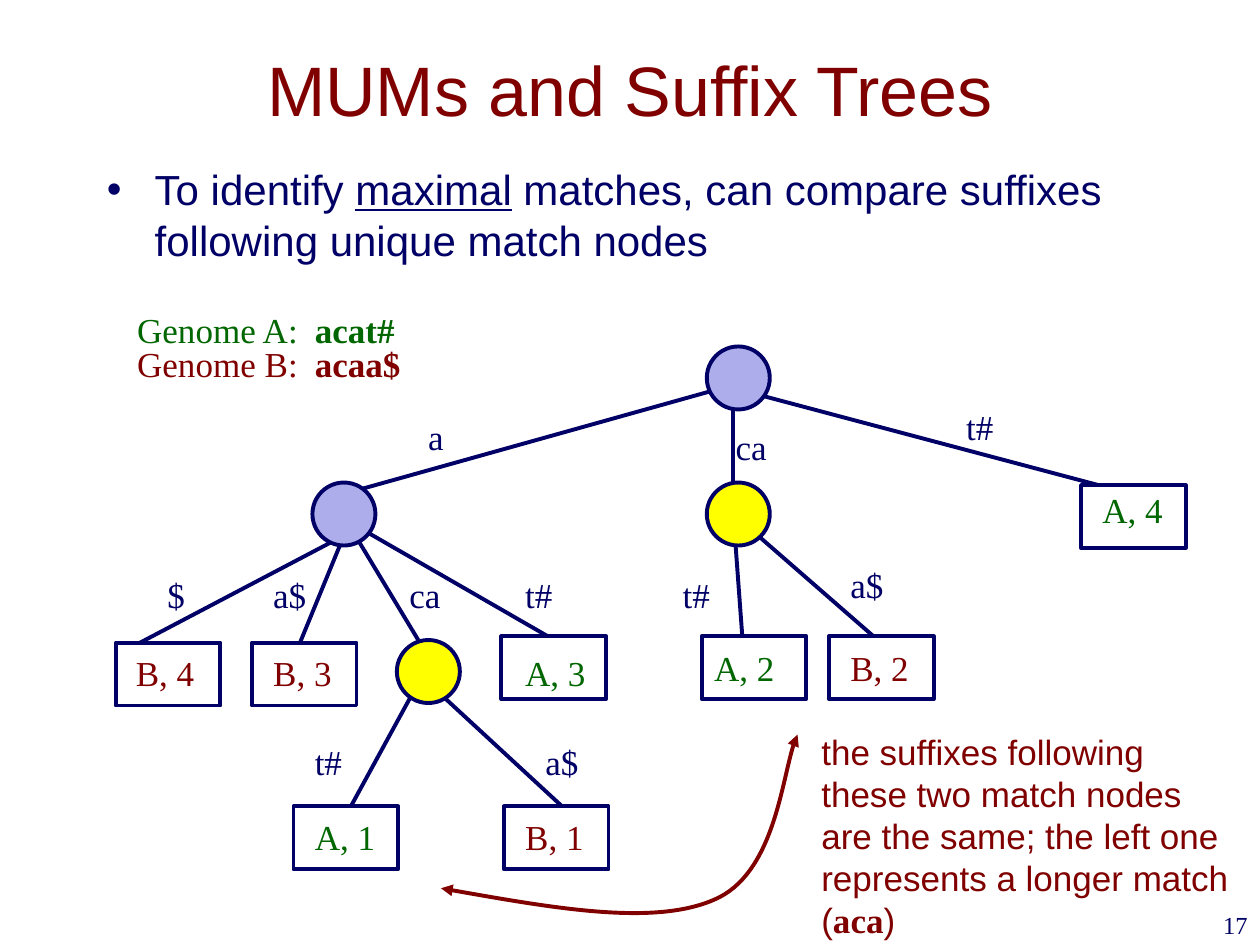
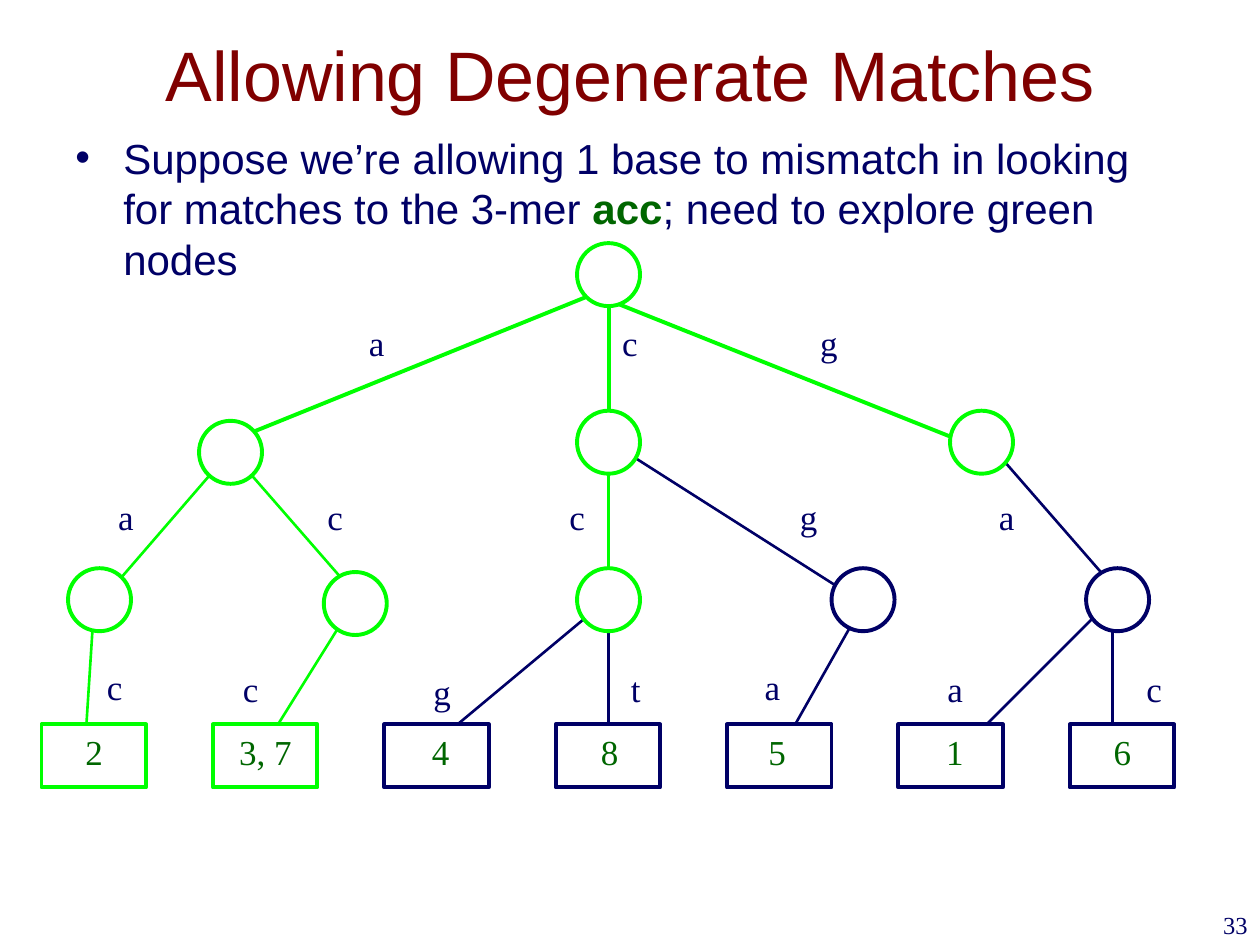
from dataclasses import dataclass
from typing import NamedTuple

from lxml.etree import SubElement
from pptx import Presentation
from pptx.dml.color import RGBColor
from pptx.enum.shapes import MSO_CONNECTOR, MSO_SHAPE
from pptx.enum.text import MSO_ANCHOR, PP_ALIGN
from pptx.oxml.ns import qn
from pptx.shapes.autoshape import Shape
from pptx.slide import Slide
from pptx.text.text import _Paragraph as Paragraph
from pptx.util import Cm, Length, Pt


@dataclass(frozen=True)
class Theme:
    navy: str = "000066"
    maroon: str = "800000"
    dark_green: str = "006600"
    lime: str = "00FF00"
    lavender: str = "ADADEB"
    yellow: str = "FFFF00"
    white: str = "FFFFFF"
    sans: str = "Arial"
    serif: str = "Times New Roman"
    title_size: int = 40
    body_size: int = 24
    label_size: int = 20
    number_size: int = 14
    thick: float = 2.25
    thin: float = 1.5


THEME = Theme()
NODE_SIZE = 0.5
LEAF_WIDTH, LEAF_HEIGHT = 0.83, 0.5
LABEL_HEIGHT = 0.43
# Glyph widths of the label font, in ems; every other glyph is half an em wide.
GLYPH_WIDTHS = {"a": 0.44, "c": 0.44, "t": 0.28, "A": 0.72, "B": 0.67, ",": 0.25, " ": 0.25}


class Area(NamedTuple):
    left: float
    top: float
    width: float
    height: float


class Span(NamedTuple):
    text: str
    color: str = THEME.navy
    size: int = THEME.label_size
    font: str = THEME.serif
    bold: bool = False
    underline: bool = False


class Edge(NamedTuple):
    start: tuple[float, float]
    end: tuple[float, float]
    color: str = THEME.navy
    weight: float = THEME.thick


class Node(NamedTuple):
    left: float
    top: float
    fill: str = THEME.white
    color: str = THEME.navy


class Label(NamedTuple):
    text: str
    left: float
    top: float
    color: str = THEME.navy


class Leaf(NamedTuple):
    left: float
    top: float
    label: Label
    color: str = THEME.navy


@dataclass(frozen=True)
class Tree:
    edges: list[Edge]
    nodes: list[Node]
    leaves: list[Leaf]
    labels: list[Label]


def inch(value: float) -> Length:
    return Cm(value * 2.54)


def rgb(color: str) -> RGBColor:
    return RGBColor.from_string(color)


def body_span(text: str, color: str = THEME.navy, **style: bool) -> Span:
    return Span(text, color, THEME.body_size, THEME.sans, **style)


def note_span(text: str) -> Span:
    return Span(text, THEME.maroon, font=THEME.sans)


def add_text(page: Slide, area: Area, paragraphs: list[list[Span]], wrap: bool = True,
             align: PP_ALIGN = PP_ALIGN.LEFT, anchor: MSO_ANCHOR = MSO_ANCHOR.TOP) -> list[Paragraph]:
    frame = page.shapes.add_textbox(*map(inch, area)).text_frame
    frame.word_wrap = wrap
    frame.vertical_anchor = anchor
    for index, spans in enumerate(paragraphs):
        para = frame.add_paragraph() if index else frame.paragraphs[0]
        para.alignment = align
        for span in spans:
            run = para.add_run()
            run.text = span.text
            font = run.font
            font.name, font.size = span.font, Pt(span.size)
            font.bold, font.underline = span.bold, span.underline
            font.color.rgb = rgb(span.color)
    return list(frame.paragraphs)


def add_title(page: Slide, area: Area, text: str) -> None:
    span = Span(text, THEME.maroon, THEME.title_size, THEME.sans)
    add_text(page, area, [[span]], align=PP_ALIGN.CENTER, anchor=MSO_ANCHOR.MIDDLE)


def add_bullet(page: Slide, area: Area, spans: list[Span]) -> None:
    para = add_text(page, area, [spans])[0]
    properties = para._p.get_or_add_pPr()
    properties.set("marL", str(inch(0.38)))
    properties.set("indent", str(-inch(0.38)))
    SubElement(properties, qn("a:buFont"), typeface=THEME.sans)
    SubElement(properties, qn("a:buChar"), char="•")


def add_page_number(page: Slide, number: int) -> None:
    span = Span(str(number), size=THEME.number_size)
    add_text(page, Area(7.92, 7.17, 2.08, 0.5), [[span]], align=PP_ALIGN.RIGHT)


def add_genome(page: Slide, top: float, name: str, sequence: str, color: str) -> None:
    spans = [Span(f"Genome {name}:\t", color), Span(sequence, color, bold=True)]
    para = add_text(page, Area(0.99, top, 2.29, LABEL_HEIGHT), [spans], wrap=False)[0]
    stops = SubElement(para._p.get_or_add_pPr(), qn("a:tabLst"))
    SubElement(stops, qn("a:tab"), pos=str(inch(1.41)), algn="l")


def add_label(page: Slide, label: Label) -> None:
    ems = sum(GLYPH_WIDTHS.get(glyph, 0.5) for glyph in label.text)
    width = 0.2 + ems * THEME.label_size / 72
    area = Area(label.left, label.top, width, LABEL_HEIGHT)
    add_text(page, area, [[Span(label.text, label.color)]], wrap=False)


def add_edge(page: Slide, edge: Edge) -> None:
    line = page.shapes.add_connector(MSO_CONNECTOR.STRAIGHT, *map(inch, edge.start + edge.end))
    line.line.color.rgb = rgb(edge.color)
    line.line.width = Pt(edge.weight)
    SubElement(line._element.spPr, qn("a:effectLst"))


def add_outlined(page: Slide, kind: MSO_SHAPE, area: Area, fill: str, color: str) -> Shape:
    shape = page.shapes.add_shape(kind, *map(inch, area))
    shape.shadow.inherit = False
    shape.fill.solid()
    shape.fill.fore_color.rgb = rgb(fill)
    shape.line.color.rgb = rgb(color)
    shape.line.width = Pt(THEME.thick)
    return shape


def add_tree(page: Slide, tree: Tree) -> None:
    for edge in tree.edges:
        add_edge(page, edge)
    for node in tree.nodes:
        area = Area(node.left, node.top, NODE_SIZE, NODE_SIZE)
        add_outlined(page, MSO_SHAPE.OVAL, area, node.fill, node.color)
    for leaf in tree.leaves:
        area = Area(leaf.left, leaf.top, LEAF_WIDTH, LEAF_HEIGHT)
        add_outlined(page, MSO_SHAPE.RECTANGLE, area, THEME.white, leaf.color)
    for label in tree.labels + [leaf.label for leaf in tree.leaves]:
        add_label(page, label)


def add_curved_arrow(page: Slide, points: list[tuple[float, float]], color: str) -> None:
    """Draw a two-headed Bézier arrow: a start point, then three points per curve."""
    start, *rest = [(inch(x), inch(y)) for x, y in points]
    builder = page.shapes.build_freeform(*start)
    builder.add_line_segments(rest, close=False)
    arrow = builder.convert_to_shape()
    segments = arrow._element.xpath(".//a:lnTo")
    for first in range(0, len(segments), 3):
        curve, *controls = segments[first:first + 3]
        curve.tag = qn("a:cubicBezTo")
        for control in controls:
            curve.append(control[0])
            control.getparent().remove(control)
    arrow.fill.background()
    arrow.line.color.rgb = rgb(color)
    arrow.line.width = Pt(THEME.thick)
    for end in ("a:headEnd", "a:tailEnd"):
        SubElement(arrow.line._get_or_add_ln(), qn(end), type="triangle")
    arrow.shadow.inherit = False


def suffix_tree() -> Tree:
    root, branch_a, branch_ca = (5.82, 3.08), (2.73, 4.25), (5.82, 4.08)
    green, red = THEME.dark_green, THEME.maroon
    return Tree(
        edges=[
            Edge((5.73, 3.08), (2.73, 3.92)), Edge(root, branch_ca), Edge(root, (8.98, 3.92)),
            Edge(branch_a, (0.98, 5.17)), Edge(branch_a, (2.32, 5.25)),
            Edge((2.82, 4.25), (3.32, 5.08)), Edge((2.82, 4.17), (4.4, 5.08)),
            Edge(branch_ca, (5.9, 5.17)), Edge(branch_ca, (7.07, 5.17)),
            Edge((3.32, 5.42), (2.73, 6.5)), Edge((3.4, 5.42), (4.57, 6.5)),
        ],
        nodes=[
            Node(5.61, 2.75, THEME.lavender), Node(2.48, 3.83, THEME.lavender),
            Node(5.61, 3.83, THEME.yellow), Node(3.15, 5.08, THEME.yellow),
        ],
        leaves=[
            Leaf(0.92, 5.1, Label("B, 4", 0.98, 5.12, red)),
            Leaf(2, 5.1, Label("B, 3", 2.07, 5.12, red)),
            Leaf(3.98, 5.05, Label("A, 3", 4.07, 5.12, green)),
            Leaf(5.57, 5.05, Label("A, 2", 5.57, 5.08, green)),
            Leaf(6.58, 5.05, Label("B, 2", 6.65, 5.08, red)),
            Leaf(8.58, 3.85, Label("A, 4", 8.65, 3.83, green)),
            Leaf(2.33, 6.4, Label("A, 1", 2.4, 6.42, green)),
            Leaf(4, 6.4, Label("B, 1", 4.07, 6.42, red)),
        ],
        labels=[
            Label("a", 3.3, 3.25), Label("ca", 5.74, 3.33), Label("t#", 7.57, 3.17),
            Label("$", 1.23, 4.5), Label("a$", 2.07, 4.5), Label("ca", 3.15, 4.5),
            Label("t#", 4.07, 4.5), Label("t#", 5.32, 4.5), Label("a$", 6.65, 4.42),
            Label("t#", 2.4, 5.83), Label("a$", 4.23, 5.83),
        ],
    )


def mismatch_tree() -> Tree:
    lime, navy, thin = THEME.lime, THEME.navy, THEME.thin
    root_edges = [((4.83, 2.35), (4.83, 3.35)), ((4.67, 2.35), (1.83, 3.5)),
                  ((4.75, 2.35), (7.83, 3.58))]
    explored_edges = [((1.83, 3.58), (0.75, 4.83)), ((1.83, 3.58), (2.92, 4.83)),
                      ((4.83, 3.58), (4.83, 4.83)), ((0.75, 4.75), (0.67, 6)),
                      ((2.83, 4.75), (2, 6.08))]
    skipped_edges = [((4.83, 3.5), (6.92, 4.83)), ((7.83, 3.5), (8.92, 4.75)),
                     ((4.83, 4.75), (3.33, 6)), ((4.83, 4.75), (4.83, 6)),
                     ((6.83, 4.83), (6.17, 6)), ((8.83, 4.75), (7.5, 6.08)),
                     ((8.83, 4.75), (8.83, 6))]
    explored_nodes = [(4.58, 1.93), (1.58, 3.34), (4.58, 3.26), (7.54, 3.26),
                      (0.54, 4.51), (2.57, 4.54), (4.58, 4.51)]
    skipped_nodes = [(6.6, 4.51), (8.62, 4.51)]
    positions = [("2", 0.58), ("3, 7", 1.8), ("4", 3.33), ("8", 4.67),
                 ("5", 6), ("1", 7.41), ("6", 8.74)]
    leaf_top, leaf_step, explored_leaves = 5.75, 1.36, 2
    return Tree(
        edges=[Edge(*ends, lime) for ends in root_edges]
        + [Edge(*ends, lime, thin) for ends in explored_edges]
        + [Edge(*ends, navy, thin) for ends in skipped_edges],
        nodes=[Node(*corner, color=lime) for corner in explored_nodes]
        + [Node(*corner) for corner in skipped_nodes],
        leaves=[
            Leaf(0.33 + index * leaf_step, leaf_top, Label(text, left, leaf_top, THEME.dark_green),
                 lime if index < explored_leaves else navy)
            for index, (text, left) in enumerate(positions)
        ],
        labels=[
            Label("a", 2.83, 2.5), Label("c", 4.84, 2.5), Label("g", 6.41, 2.5),
            Label("a", 0.84, 3.88), Label("c", 2.5, 3.88), Label("c", 4.42, 3.88),
            Label("g", 6.25, 3.88), Label("a", 7.83, 3.88),
            Label("c", 0.75, 5.23), Label("c", 1.83, 5.25), Label("g", 3.34, 5.27),
            Label("t", 4.91, 5.25), Label("a", 5.97, 5.23), Label("a", 7.42, 5.25),
            Label("c", 9, 5.25),
        ],
    )


def build_suffix_page(page: Slide) -> None:
    add_title(page, Area(0.75, 0.08, 8.5, 1.25), "MUMs and Suffix Trees")
    add_bullet(page, Area(0.75, 1.25, 8.5, 1.33), [
        body_span("To identify "), body_span("maximal", underline=True),
        body_span(" matches, can compare suffixes following unique match nodes")])
    add_genome(page, 2.4, "A", "acat#", THEME.dark_green)
    add_genome(page, 2.67, "B", "acaa$", THEME.maroon)
    add_tree(page, suffix_tree())
    add_curved_arrow(page, [(3.5, 7.05), (4.35, 7.2), (5.19, 7.35), (5.67, 7.14),
                            (6.14, 6.94), (6.22, 6.05), (6.33, 5.83)], THEME.maroon)
    add_text(page, Area(6.42, 5.75, 3.75, 1.78), [
        [note_span("the suffixes following")],
        [note_span("these two match nodes")],
        [note_span("are the same; the left one represents a longer match ("),
         Span("aca", THEME.maroon, bold=True), note_span(")")]])
    add_page_number(page, 17)


def build_mismatch_page(page: Slide) -> None:
    add_title(page, Area(0.75, 0.17, 8.5, 0.83), "Allowing Degenerate Matches")
    add_bullet(page, Area(0.5, 1, 8.92, 1.25), [
        body_span("Suppose we’re allowing 1 base to mismatch in looking for matches to the 3-mer "),
        body_span("acc", THEME.dark_green, bold=True), body_span("; need to explore green nodes")])
    add_tree(page, mismatch_tree())
    add_page_number(page, 33)


def main() -> None:
    deck = Presentation()
    deck.slide_width, deck.slide_height = Cm(25.4), Cm(19.05)
    for build in (build_suffix_page, build_mismatch_page):
        build(deck.slides.add_slide(deck.slide_layouts[6]))
    deck.save("out.pptx")


if __name__ == "__main__":
    main()
